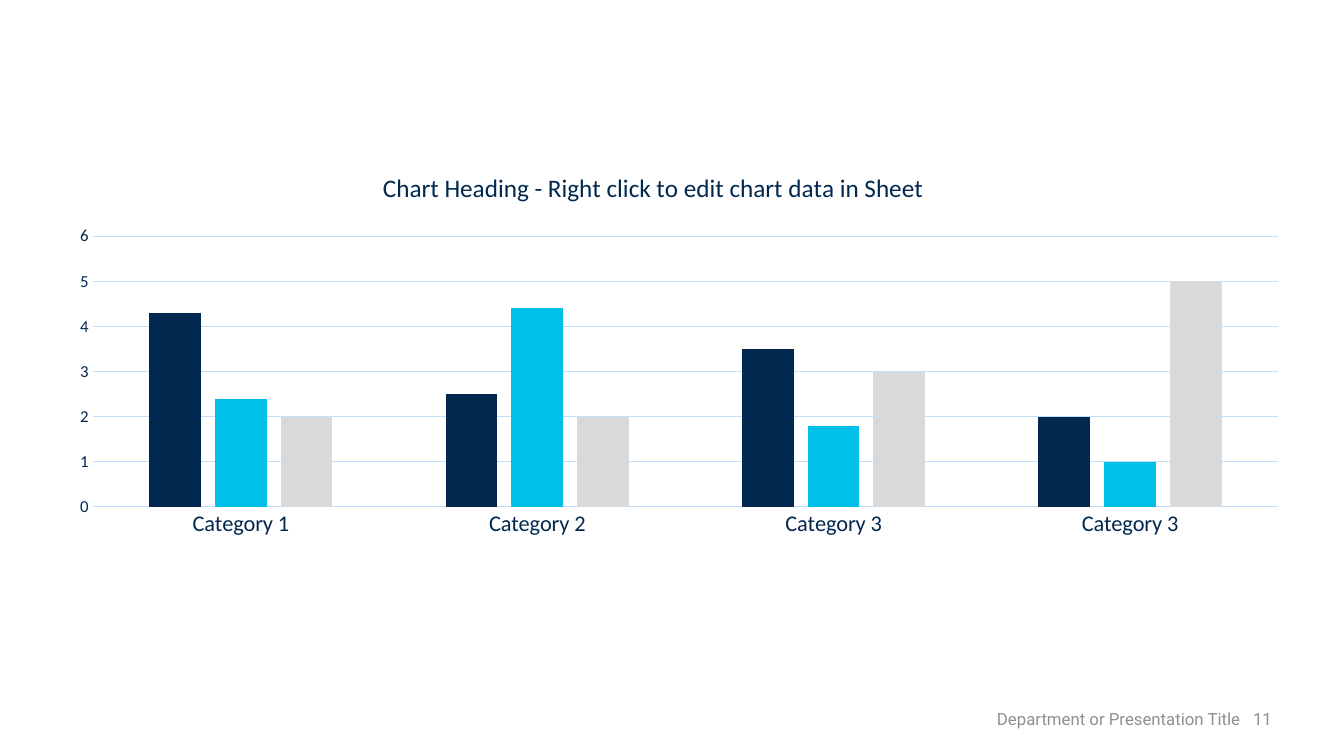
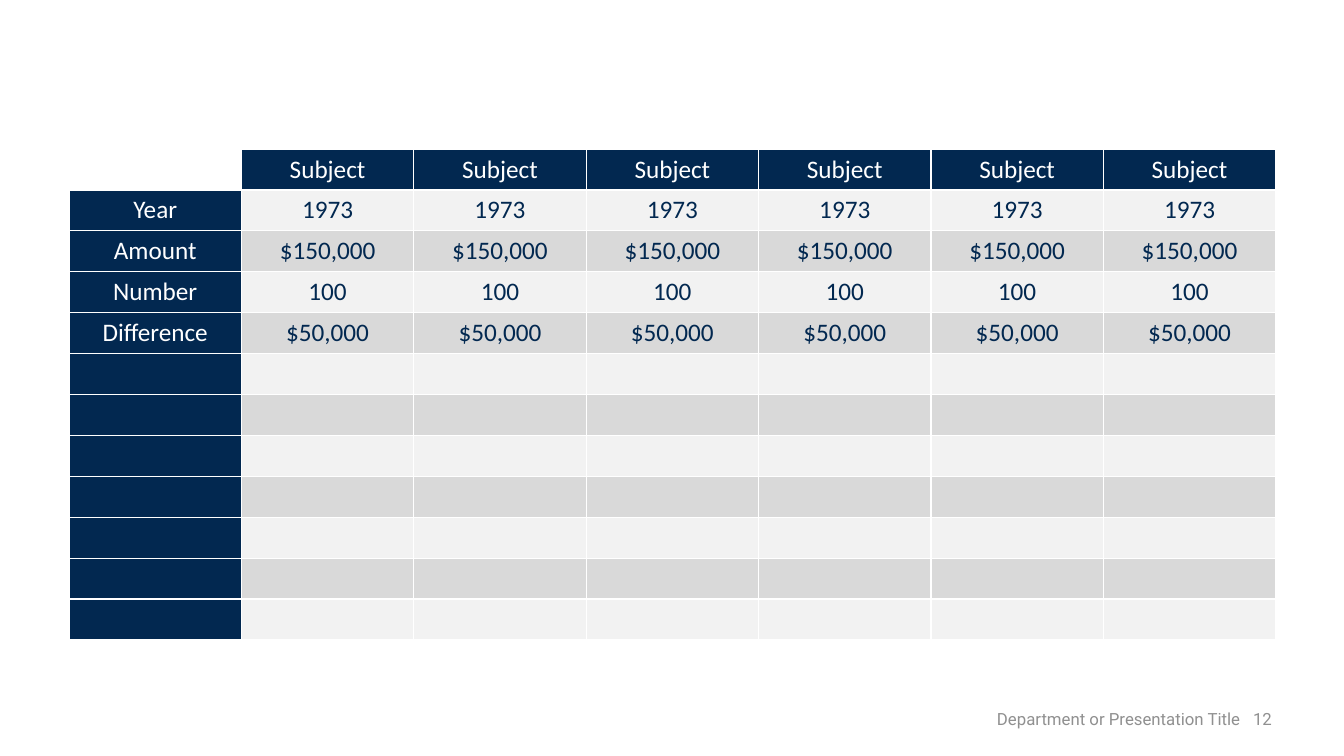
from dataclasses import dataclass

import pptx
import pptx.chart.data
import pptx.dml.color
import pptx.enum.chart
import pptx.enum.text
import pptx.oxml
import pptx.oxml.ns
import pptx.slide
import pptx.util
from lxml import etree

RGBColor = pptx.dml.color.RGBColor
qn = pptx.oxml.ns.qn

# Shared look
NAVY = RGBColor(0x02, 0x28, 0x50)
CYAN = RGBColor(0x00, 0xBF, 0xE8)
PALE_BLUE = RGBColor(0xC0, 0xDE, 0xFD)
SILVER = RGBColor(0xD9, 0xD9, 0xD9)
LIGHT_GRAY = RGBColor(0xF2, 0xF2, 0xF2)
FOOTER_GRAY = RGBColor(0x90, 0x90, 0x90)
WHITE = RGBColor(0xFF, 0xFF, 0xFF)
BODY_FONT = "Calibri"
FOOTER_FONT = "Roboto"
FOOTER_TEXT = "Department or Presentation Title"
BLANK_LAYOUT = 6
EMU_PER_PX = 914400 / 100.8


@dataclass(frozen=True)
class Box:
    left: int
    top: int
    width: int
    height: int

    def emu(self) -> tuple:
        return px(self.left), px(self.top), px(self.width), px(self.height)


@dataclass(frozen=True)
class Series:
    name: str
    values: tuple
    color: RGBColor


@dataclass(frozen=True)
class TableRow:
    heading: str = ""
    value: str = ""


FOOTER_BOX = Box(767, 701, 520, 33)
FOOTER_INDENT = 230
NUMBER_TAB = 256
CHART_BOX = Box(61, 151, 1221, 476)
TABLE_BOX = Box(69, 149, 1207, 491)

CHART_TITLE = "Chart Heading - Right click to edit chart data in Sheet"
CATEGORIES = ("Category 1", "Category 2", "Category 3", "Category 3")
SERIES = (
    Series("Series 1", (4.3, 2.5, 3.5, 2), NAVY),
    Series("Series 2", (2.4, 4.4, 1.8, 1), CYAN),
    Series("Series 3", (2, 2, 3, 5), SILVER),
)

COLUMN_HEADING = "Subject"
SUBJECT_COUNT = 6
EMPTY_ROW_COUNT = 7
TABLE_ROWS = (
    TableRow("Year", "1973"),
    TableRow("Amount", "$150,000"),
    TableRow("Number", "100"),
    TableRow("Difference", "$50,000"),
) + (TableRow(),) * EMPTY_ROW_COUNT


def px(length: int) -> pptx.util.Emu:
    return pptx.util.Emu(round(length * EMU_PER_PX))


def style_font(font, size: int, color: RGBColor, name: str = BODY_FONT) -> None:
    font.name = name
    font.size = pptx.util.Pt(size)
    font.color.rgb = color


def add_run(paragraph, text: str, size: int, color: RGBColor, name: str = BODY_FONT) -> None:
    run = paragraph.add_run()
    run.text = text
    style_font(run.font, size, color, name)


def style_line(line) -> None:
    line.color.rgb = PALE_BLUE
    line.width = pptx.util.Pt(0.75)


def add_footer(slide: pptx.slide.Slide, number: int) -> None:
    text_frame = slide.shapes.add_textbox(*FOOTER_BOX.emu()).text_frame
    text_frame.word_wrap = True
    text_frame.vertical_anchor = pptx.enum.text.MSO_ANCHOR.BOTTOM
    text_frame.margin_left = px(FOOTER_INDENT)
    paragraph = text_frame.paragraphs[0]
    paragraph.line_spacing = 0.9
    tabs = etree.SubElement(paragraph._p.get_or_add_pPr(), qn("a:tabLst"))
    etree.SubElement(tabs, qn("a:tab"), pos=str(px(NUMBER_TAB)), algn="l")
    for text in (FOOTER_TEXT, f"\t{number}"):
        add_run(paragraph, text, 12, FOOTER_GRAY, FOOTER_FONT)


def set_layout(element, index: int, **settings) -> None:
    """Place a chart part by hand, in fractions of the chart area."""
    for old_layout in element.findall(qn("c:layout")):
        element.remove(old_layout)
    layout = etree.Element(qn("c:layout"))
    manual = etree.SubElement(layout, qn("c:manualLayout"))
    for name, value in settings.items():
        etree.SubElement(manual, qn(f"c:{name}"), val=str(value))
    element.insert(index, layout)


def add_column_chart(slide: pptx.slide.Slide) -> None:
    data = pptx.chart.data.CategoryChartData()
    data.categories = CATEGORIES
    for series in SERIES:
        data.add_series(series.name, series.values)
    chart = slide.shapes.add_chart(
        pptx.enum.chart.XL_CHART_TYPE.COLUMN_CLUSTERED, *CHART_BOX.emu(), data
    ).chart
    style_font(chart.font, 10, NAVY, "Karla")
    chart.has_legend = False

    # Heading and plot area
    chart.has_title = True
    title = chart.chart_title
    add_run(title.text_frame.paragraphs[0], CHART_TITLE, 18, NAVY)
    title.text_frame.paragraphs[0].runs[0].font.bold = False
    set_layout(title._element, 1, xMode="edge", yMode="edge", x=0.26, y=0.03)
    plot_area = chart._chartSpace.find(".//" + qn("c:plotArea"))
    set_layout(plot_area, 0, layoutTarget="inner", xMode="edge", yMode="edge",
               x=0.026, y=0.179, w=0.971, h=0.569)

    # Columns
    plot = chart.plots[0]
    plot.gap_width = 219
    plot.overlap = -27
    plot.vary_by_categories = False
    for column, series in zip(plot.series, SERIES):
        column.format.fill.solid()
        column.format.fill.fore_color.rgb = series.color

    # Axes
    for axis, size in ((chart.category_axis, 16), (chart.value_axis, 12)):
        axis.major_tick_mark = pptx.enum.chart.XL_TICK_MARK.NONE
        axis.minor_tick_mark = pptx.enum.chart.XL_TICK_MARK.NONE
        style_font(axis.tick_labels.font, size, NAVY)
    style_line(chart.category_axis.format.line)
    value_axis = chart.value_axis
    value_axis.minimum_scale = 0
    value_axis.maximum_scale = 6
    value_axis.major_unit = 1
    value_axis.format.line.fill.background()
    style_line(value_axis.major_gridlines.format.line)


def fill_cell(cell, text: str, fill: RGBColor, color: RGBColor) -> None:
    properties = cell._tc.get_or_add_tcPr()
    for side in ("lnL", "lnR", "lnT", "lnB"):
        border = etree.SubElement(properties, qn(f"a:{side}"), w=str(pptx.util.Pt(1)))
        solid = etree.SubElement(border, qn("a:solidFill"))
        etree.SubElement(solid, qn("a:srgbClr"), val=str(WHITE))
    cell.fill.solid()
    cell.fill.fore_color.rgb = fill
    paragraph = cell.text_frame.paragraphs[0]
    paragraph.alignment = pptx.enum.text.PP_ALIGN.CENTER
    if text:
        add_run(paragraph, text, 18, color)
    else:
        style_font(paragraph.font, 18, color)


def add_subject_table(slide: pptx.slide.Slide) -> None:
    row_count, column_count = len(TABLE_ROWS) + 1, SUBJECT_COUNT + 1
    table = slide.shapes.add_table(row_count, column_count, *TABLE_BOX.emu()).table
    table.first_row = False
    table.horz_banding = False
    for column in table.columns:
        column.width = px(TABLE_BOX.width) // column_count
    for row in table.rows:
        row.height = px(TABLE_BOX.height) // row_count

    # Heading row, then banded rows
    fill_cell(table.cell(0, 0), "", WHITE, NAVY)
    for column_index in range(1, column_count):
        fill_cell(table.cell(0, column_index), COLUMN_HEADING, NAVY, WHITE)
    for row_index, row in enumerate(TABLE_ROWS, start=1):
        fill_cell(table.cell(row_index, 0), row.heading, NAVY, WHITE)
        band = LIGHT_GRAY if row_index % 2 else SILVER
        for column_index in range(1, column_count):
            fill_cell(table.cell(row_index, column_index), row.value, band, NAVY)


def main() -> None:
    presentation = pptx.Presentation()
    presentation.slide_width = px(1344)
    presentation.slide_height = px(756)
    for number, add_content in enumerate((add_column_chart, add_subject_table), start=11):
        slide = presentation.slides.add_slide(presentation.slide_layouts[BLANK_LAYOUT])
        add_footer(slide, number)
        add_content(slide)
    presentation.save("out.pptx")


if __name__ == "__main__":
    main()
